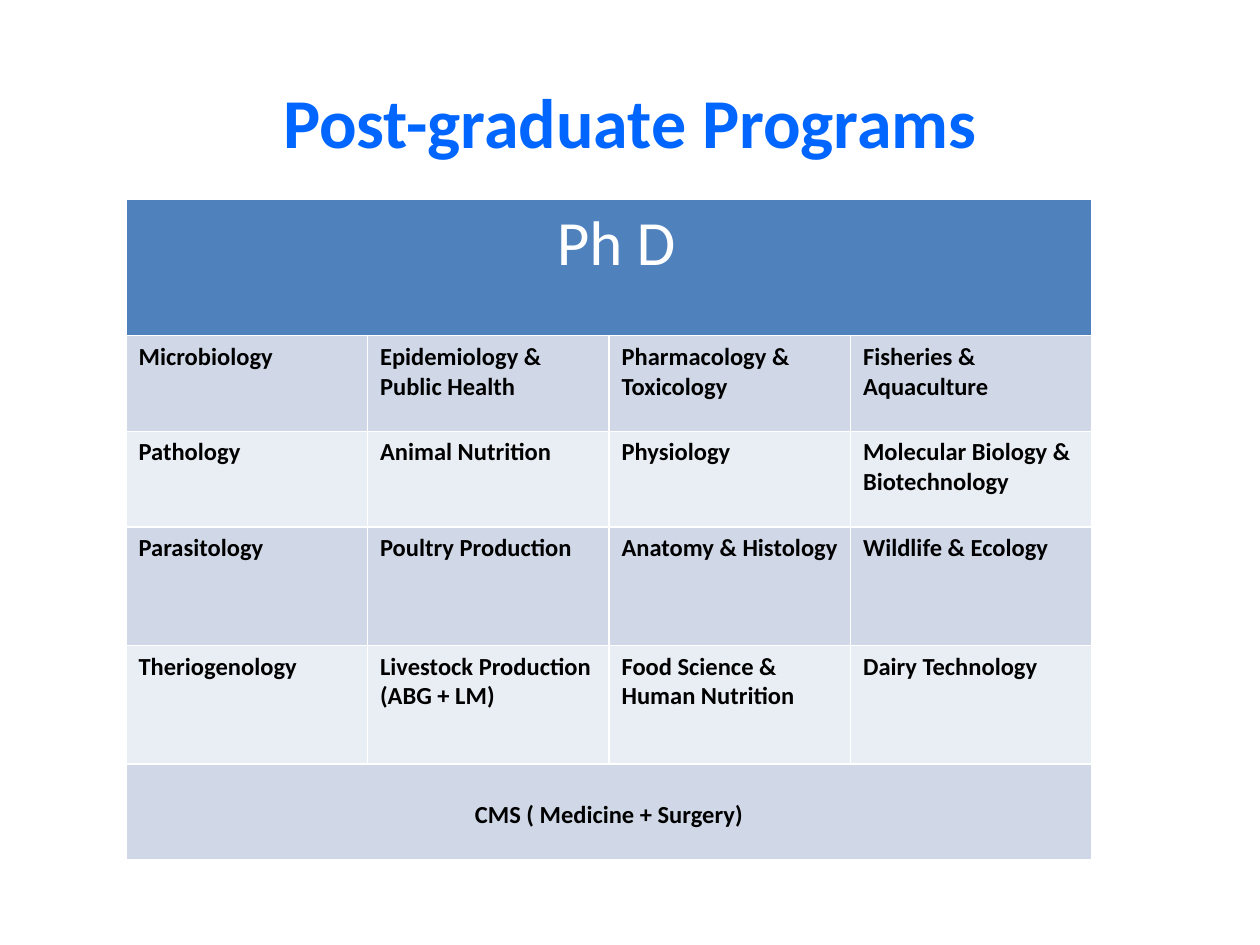
import pptx
import pptx.util
import pptx.dml.color
import pptx.enum.text

Pt = pptx.util.Pt
ALIGN = pptx.enum.text.PP_ALIGN
FONT = "Calibri"
HUES = {"title": "0066FF", "head": "4F81BD", "odd": "D0D8E8",
        "even": "E9EDF4", "white": "FFFFFF", "black": "000000"}

TITLE = "Post-graduate Programs"
HEAD = " Ph D"
FIELDS = [
    ["Microbiology", "Epidemiology & Public Health",
     "Pharmacology & Toxicology", "Fisheries & Aquaculture"],
    ["Pathology", "Animal Nutrition",
     "Physiology", "Molecular Biology & Biotechnology"],
    ["Parasitology", "Poultry Production",
     "Anatomy & Histology", "Wildlife & Ecology"],
    ["Theriogenology", "Livestock Production\n(ABG + LM)",
     "Food Science & Human Nutrition", "Dairy Technology"],
]
FOOT = "CMS ( Medicine + Surgery)"
HEIGHTS = [77.76, 54.72, 54.72, 67.68, 67.68, 54.72]
WIDTH = 552


def color(name):
    return pptx.dml.color.RGBColor.from_string(HUES[name])


def write(frame, text, size, hue, bold=True, align=ALIGN.LEFT):
    """Put each line of the text in a paragraph of its own."""
    for i, line in enumerate(text.split("\n")):
        para = frame.add_paragraph() if i else frame.paragraphs[0]
        para.alignment = align
        run = para.add_run()
        run.text = line
        run.font.name = FONT
        run.font.size = Pt(size)
        run.font.bold = bold
        run.font.color.rgb = color(hue)


def paint(cell, hue):
    cell.fill.solid()
    cell.fill.fore_color.rgb = color(hue)


def add_title(slide):
    title = slide.shapes.title
    title.left, title.top = Pt(36), Pt(24)
    title.width, title.height = Pt(648), Pt(90)
    frame = title.text_frame
    frame.vertical_anchor = pptx.enum.text.MSO_ANCHOR.MIDDLE
    write(frame, TITLE, 40, "title", align=ALIGN.CENTER)


def add_grid(slide):
    rows, cols = len(HEIGHTS), len(FIELDS[0])
    grid = slide.shapes.add_table(rows, cols, Pt(72), Pt(114),
                                  Pt(WIDTH), Pt(sum(HEIGHTS))).table
    for col in grid.columns:
        col.width = Pt(WIDTH / cols)
    for row, height in zip(grid.rows, HEIGHTS):
        row.height = Pt(height)

    head, foot = grid.cell(0, 0), grid.cell(rows - 1, 0)
    for cell, row, hue in ((head, 0, "head"), (foot, rows - 1, "odd")):
        cell.merge(grid.cell(row, cols - 1))
        paint(cell, hue)
    write(head.text_frame, HEAD, 36, "white", False, ALIGN.CENTER)
    foot.margin_top = Pt(20.6)
    write(foot.text_frame, FOOT, 14, "black", align=ALIGN.CENTER)

    for r, names in enumerate(FIELDS, 1):
        for c, name in enumerate(names):
            cell = grid.cell(r, c)
            paint(cell, "odd" if r % 2 else "even")
            write(cell.text_frame, name, 14, "black")


def main():
    deck = pptx.Presentation()
    deck.slide_width, deck.slide_height = Pt(720), Pt(540)
    slide = deck.slides.add_slide(deck.slide_layouts[5])
    add_title(slide)
    add_grid(slide)
    deck.save("out.pptx")


if __name__ == "__main__":
    main()
